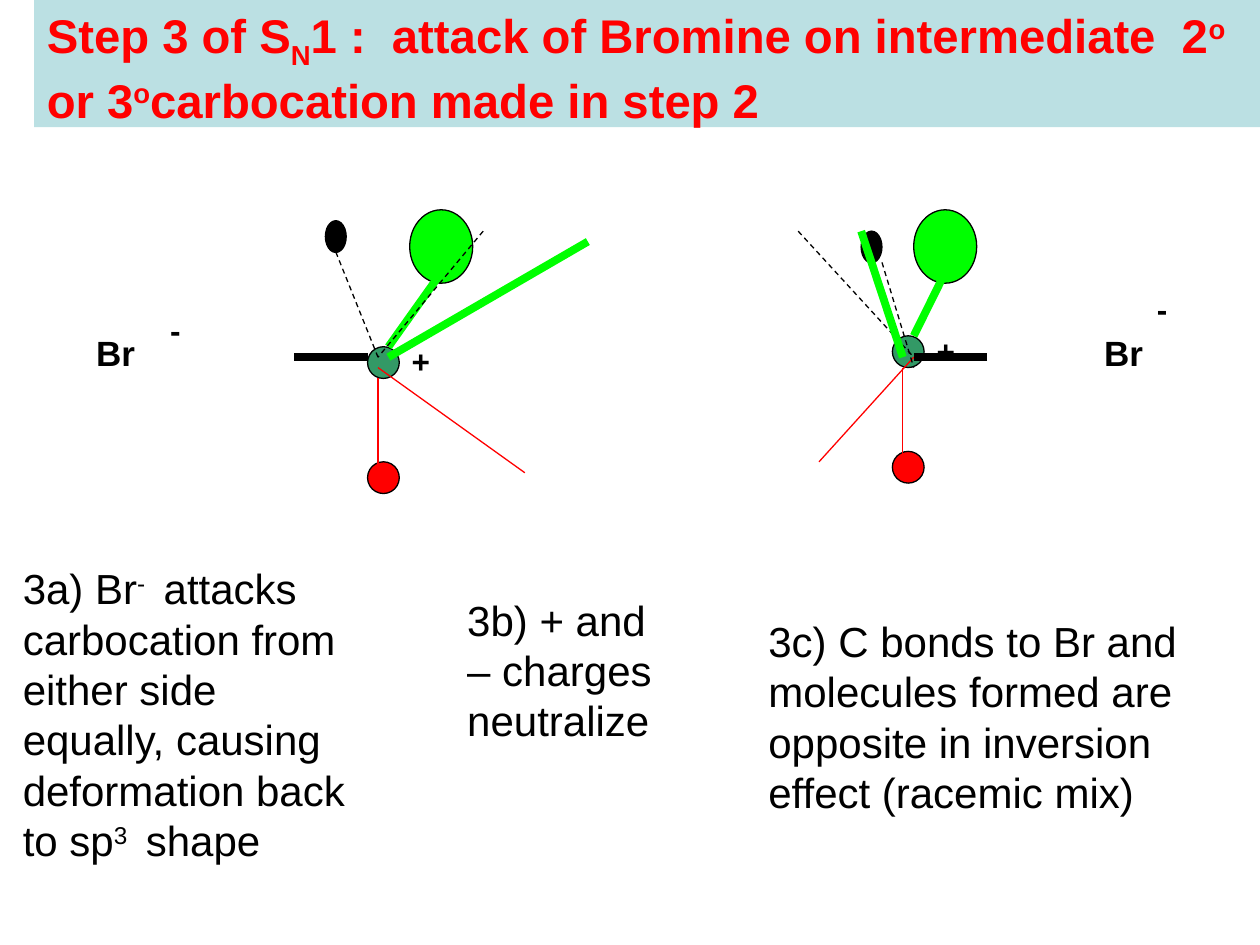
"""Build the slide on step 3 of the SN1 reaction."""
from lxml import etree
from pptx import Presentation
from pptx.dml.color import RGBColor
from pptx.enum.dml import MSO_LINE
from pptx.enum.shapes import MSO_CONNECTOR, MSO_SHAPE
from pptx.enum.text import MSO_ANCHOR, MSO_AUTO_SIZE, PP_ALIGN
from pptx.oxml.ns import qn
from pptx.util import Cm, Pt

OVAL = MSO_SHAPE.OVAL
STRAIGHT = MSO_CONNECTOR.STRAIGHT
DASH = MSO_LINE.DASH
SOLID = MSO_LINE.SOLID
TOP = MSO_ANCHOR.TOP
LEFT = PP_ALIGN.LEFT
GROW = MSO_AUTO_SIZE.SHAPE_TO_FIT_TEXT

BLACK = RGBColor(0x00, 0x00, 0x00)
RED = RGBColor(0xFF, 0x00, 0x00)
GREEN = RGBColor(0x00, 0xFF, 0x00)
TEAL = RGBColor(0x33, 0x99, 0x66)
PALE_BLUE = RGBColor(0xBB, 0xE0, 0xE3)

SUB, SUP = -25000, 30000
THIN, THICK = 0.75, 4.5


def write(sp, *parts, size=24, bold=False, color=BLACK):
    """Fill a shape with plain strings and (string, baseline) pairs."""
    tf = sp.text_frame
    tf.word_wrap = True
    tf.auto_size = GROW
    tf.vertical_anchor = TOP
    p = tf.paragraphs[0]
    p.alignment = LEFT
    for part in parts:
        text, baseline = (part, 0) if isinstance(part, str) else part
        r = p.add_run()
        r.text = text
        r.font.name = "Arial"
        r.font.size = Pt(size)
        r.font.bold = bold
        r.font.color.rgb = color
        if baseline:
            r._r.get_or_add_rPr().set("baseline", str(baseline))


prs = Presentation()
prs.slide_width, prs.slide_height = Cm(25.4), Cm(19.05)
s = prs.slides.add_slide(prs.slide_layouts[5])

title = s.shapes.title
title.left, title.top, title.width, title.height = Cm(0.69), Cm(0), Cm(24.71), Cm(2.56)
title.fill.solid()
title.fill.fore_color.rgb = PALE_BLUE
write(title, "Step 3 of S", ("N", SUB), "1 :  attack of Bromine on intermediate  2",
      ("o", SUP), " or 3", ("o", SUP), "carbocation made in step 2",
      size=27, bold=True, color=RED)

atoms = [
    (7.41, 9.31, 0.64, 0.64, RED),
    (6.56, 4.45, 0.42, 0.64, BLACK),
    (8.26, 4.23, 1.27, 1.48, GREEN),
    (7.41, 6.99, 0.64, 0.64, TEAL),
    (17.99, 9.1, 0.64, 0.64, RED),
    (17.36, 4.66, 0.42, 0.64, BLACK),
    (18.42, 4.23, 1.27, 1.48, GREEN),
    (17.99, 6.77, 0.64, 0.64, TEAL),
]
for x, y, w, h, color in atoms:
    sp = s.shapes.add_shape(OVAL, Cm(x), Cm(y), Cm(w), Cm(h))
    sp.shadow.inherit = False
    sp.fill.solid()
    sp.fill.fore_color.rgb = color
    sp.line.color.rgb = BLACK
    sp.line.width = Pt(THIN)

labels = [
    (8.05, 6.77, 1.27, 1.02, "+", 18),
    (18.63, 6.56, 1.27, 1.02, "+", 18),
    (3.18, 6.14, 0.85, 1.02, "-", 18),
    (1.69, 6.56, 1.48, 1.1, "Br", 20),
    (22.01, 6.56, 1.48, 1.1, "Br", 20),
    (23.07, 5.72, 1.06, 1.02, "-", 18),
]
for x, y, w, h, text, size in labels:
    sp = s.shapes.add_textbox(Cm(x), Cm(y), Cm(w), Cm(h))
    write(sp, text, size=size, bold=True)

notes = [
    (0.21, 11.22, 7.41, 6.4,
     ["3a) Br", ("- ", SUP),
      " attacks carbocation from either side equally, causing deformation back to sp",
      ("3 ", SUP), " shape"]),
    (9.17, 11.85, 4.23, 3.33, ["3b) + and – charges neutralize"]),
    (15.24, 12.28, 9.31, 4.37,
     ["3c) C bonds to Br and molecules formed are opposite in inversion effect (racemic mix)"]),
]
for x, y, w, h, parts in notes:
    sp = s.shapes.add_textbox(Cm(x), Cm(y), Cm(w), Cm(h))
    write(sp, *parts)

bonds = [
    (6.77, 5.08, 7.62, 7.2, BLACK, THIN, DASH),
    (7.83, 6.99, 8.89, 5.5, GREEN, THICK, SOLID),
    (7.62, 7.62, 7.62, 9.53, RED, THIN, SOLID),
    (16.09, 4.66, 18.42, 7.2, BLACK, THIN, DASH),
    (18.42, 6.77, 19.05, 5.5, GREEN, THICK, SOLID),
    (18.2, 7.41, 18.2, 9.31, RED, THIN, SOLID),
    (7.83, 7.2, 11.85, 4.87, GREEN, THICK, SOLID),
    (9.74, 4.66, 7.62, 7.2, BLACK, THIN, DASH),
    (7.62, 7.41, 10.58, 9.53, RED, THIN, SOLID),
    (18.42, 7.2, 16.51, 9.31, RED, THIN, SOLID),
    (18.2, 7.2, 17.36, 4.66, GREEN, THICK, SOLID),
    (17.78, 5.29, 18.42, 7.41, BLACK, THIN, DASH),
    (7.41, 7.2, 5.93, 7.2, BLACK, THICK, SOLID),
    (19.9, 7.2, 18.42, 7.2, BLACK, THICK, SOLID),
]
for x1, y1, x2, y2, color, width, dash in bonds:
    bond = s.shapes.add_connector(STRAIGHT, Cm(x1), Cm(y1), Cm(x2), Cm(y2))
    bond.line.color.rgb = color
    bond.line.width = Pt(width)
    bond.line.dash_style = dash
    etree.SubElement(bond._element.spPr, qn("a:effectLst"))

prs.save("out.pptx")
